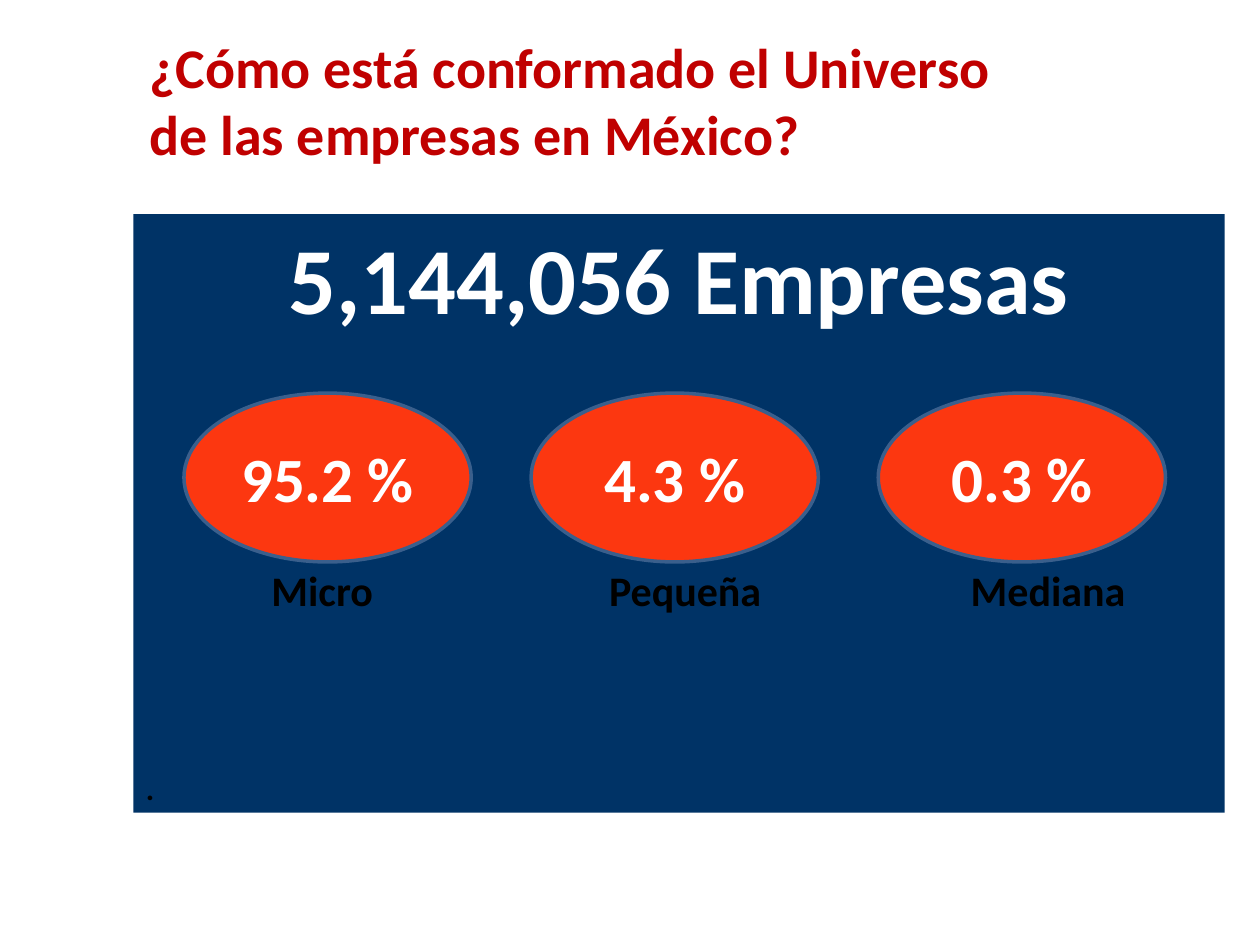
from lxml.etree import SubElement
from pptx import Presentation
from pptx.dml.color import RGBColor
from pptx.enum.shapes import MSO_SHAPE
from pptx.enum.text import MSO_ANCHOR, PP_ALIGN
from pptx.oxml.ns import qn
from pptx.util import Inches, Pt

COLORS = {
    "title": "C00000",
    "panel": "003366",
    "oval": "FC3710",
    "outline": "3A5F8C",
    "light": "FFFFFF",
    "dark": "000000",
}
FONT = "Calibri"
CELL = Inches(0.1)  # the slide is a grid of 100 columns by 75 rows
COLUMNS, ROWS = 100, 75
SHARES = ["95.2 %", "4.3 %", "0.3 %"]
SIZES = ["Micro", "Pequeña", "Mediana"]


def to_emu(box):
    return [round(cells * CELL) for cells in box]


def rgb(name):
    return RGBColor.from_string(COLORS[name])


def write(paragraph, text, size, color, align=PP_ALIGN.LEFT):
    paragraph.alignment = align
    run = paragraph.add_run()
    run.text = text
    run.font.name = FONT
    run.font.size = Pt(size)
    run.font.bold = True
    run.font.color.rgb = rgb(color)


def add_filled(slide, preset, box, fill):
    shape = slide.shapes.add_shape(preset, *to_emu(box))
    shape.shadow.inherit = False
    shape.fill.solid()
    shape.fill.fore_color.rgb = rgb(fill)
    shape.line.fill.background()
    return shape


def add_center_tabs(paragraph, first, step, count):
    stops = SubElement(paragraph._p.get_or_add_pPr(), qn("a:tabLst"))
    for index in range(count):
        position = round((first + index * step) * CELL)
        SubElement(stops, qn("a:tab"), pos=str(position), algn="ctr")


def add_title(slide, box):
    title = slide.shapes.add_textbox(*to_emu(box))
    title.text_frame.word_wrap = True
    write(title.text_frame.paragraphs[0],
          "¿Cómo está conformado el Universo de las empresas en México?",
          32, "title")


def add_panel(slide, box):
    panel = add_filled(slide, MSO_SHAPE.RECTANGLE, box, "panel")
    frame = panel.text_frame
    frame.word_wrap = True
    frame.vertical_anchor = MSO_ANCHOR.TOP

    # Total number of companies
    write(frame.paragraphs[0], "5,144,056 Empresas", 54, "light", PP_ALIGN.CENTER)

    # Company sizes, each centred on a tab stop
    labels = frame.add_paragraph()
    labels.space_before = Pt(132)
    add_center_tabs(labels, first=14, step=28.8, count=len(SIZES))
    write(labels, "".join("\t" + size for size in SIZES), 24, "dark")

    # Closing dot
    closing = frame.add_paragraph()
    closing.space_before = Pt(88)
    write(closing, ".", 18, "dark")


def add_ovals(slide, box):
    left, top, width, height = box
    oval_width = 22.8
    step = (width - oval_width) / (len(SHARES) - 1)
    for index, share in enumerate(SHARES):
        oval = add_filled(slide, MSO_SHAPE.OVAL,
                          (left + index * step, top, oval_width, height), "oval")
        oval.line.color.rgb = rgb("outline")
        oval.line.width = Pt(2)
        oval.text_frame.vertical_anchor = MSO_ANCHOR.MIDDLE
        write(oval.text_frame.paragraphs[0], share, 36, "light", PP_ALIGN.CENTER)


def main():
    deck = Presentation()
    deck.slide_width, deck.slide_height = COLUMNS * CELL, ROWS * CELL
    slide = deck.slides.add_slide(deck.slide_layouts[6])
    add_title(slide, (10.9, 2.1, 71.4, 11.8))
    add_panel(slide, (10.6, 17, 86.6, 47.5))
    add_ovals(slide, (14.6, 31.2, 77.9, 13.4))
    deck.save("out.pptx")


if __name__ == "__main__":
    main()
